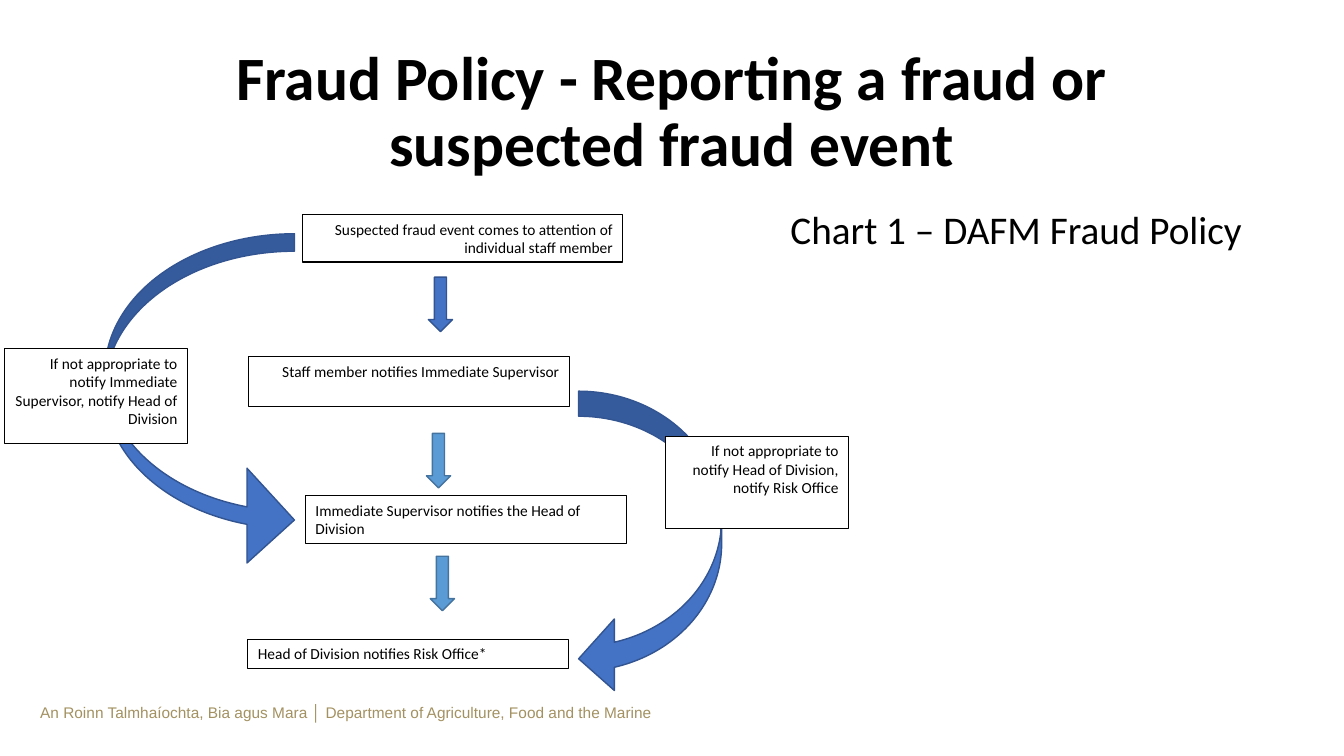
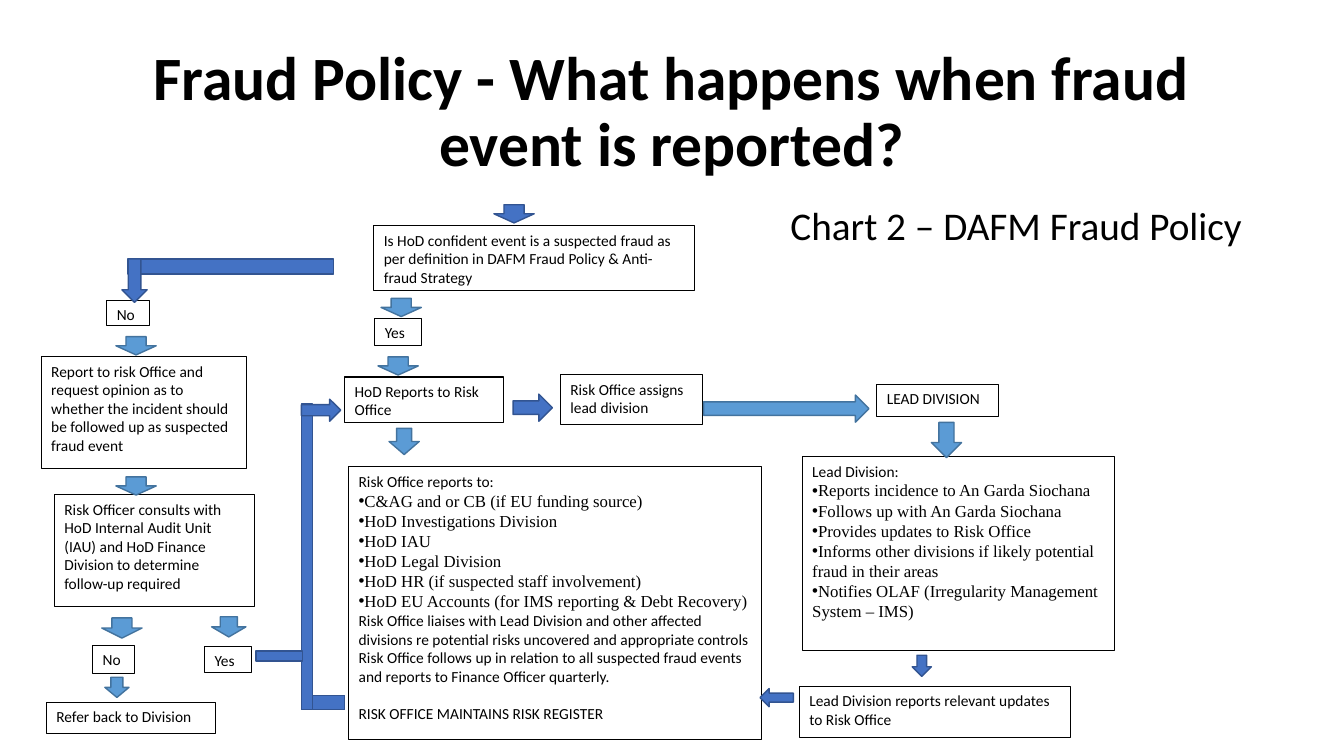
import pptx
import pptx.dml.color
import pptx.enum.shapes
import pptx.enum.text
import pptx.oxml.ns
import pptx.util
from lxml import etree

Pt = pptx.util.Pt
PRESET = pptx.enum.shapes.MSO_SHAPE
ALIGN = pptx.enum.text.PP_ALIGN
ANCHOR = pptx.enum.text.MSO_ANCHOR

COLOURS = {
    "white": "FFFFFF", "black": "000000", "gold": "A39161",
    "blue": "4472C4", "blue edge": "325491",
    "sky": "5B9BD5", "sky edge": "43739E",
}

# Text styles: font values, paragraph values, colour
NOTE_FONT = {"name": "Calibri", "size": Pt(11)}
STYLES = {
    "title": ({"name": "Calibri", "size": Pt(44), "bold": True},
              {"alignment": ALIGN.CENTER, "line_spacing": 0.9}, "black"),
    "subtitle": ({"name": "Calibri", "size": Pt(28)},
                 {"alignment": ALIGN.RIGHT, "line_spacing": 0.9}, "black"),
    "note": (NOTE_FONT, {"alignment": ALIGN.LEFT}, "black"),
    "note right": (NOTE_FONT, {"alignment": ALIGN.RIGHT}, "black"),
    "closing": (NOTE_FONT, {"alignment": ALIGN.LEFT, "space_before": Pt(13.4)}, "black"),
    "bullet": ({"name": "Times New Roman", "size": Pt(12)},
               {"alignment": ALIGN.LEFT}, "black"),
    "footer": ({"name": "Arial", "size": Pt(11)}, {"alignment": ALIGN.LEFT}, "gold"),
}


def write(holder, lines, anchor=ANCHOR.TOP):
    """Fill a box or text box with (style, text) lines."""
    frame = holder.text_frame
    frame.word_wrap = True
    frame.vertical_anchor = anchor
    for number, (style, text) in enumerate(lines):
        paragraph = frame.add_paragraph() if number else frame.paragraphs[0]
        run = paragraph.add_run()
        run.text = text
        font_values, paragraph_values, colour = STYLES[style]
        for target, values in ((run.font, font_values), (paragraph, paragraph_values)):
            for name, value in values.items():
                setattr(target, name, value)
        run.font.color.rgb = pptx.dml.color.RGBColor.from_string(COLOURS[colour])
        if style == "bullet":
            properties = paragraph._p.get_or_add_pPr()
            etree.SubElement(properties, pptx.oxml.ns.qn("a:buFont"), typeface="Arial")
            etree.SubElement(properties, pptx.oxml.ns.qn("a:buChar"), char="•")


def draw(slide, preset, place, fill, edge, width):
    """Add a flat preset shape at (left, top, width, height) in points."""
    shape = slide.shapes.add_shape(preset, *map(Pt, place))
    shape.shadow.inherit = False
    shape.fill.solid()
    shape.fill.fore_color.rgb = pptx.dml.color.RGBColor.from_string(COLOURS[fill])
    shape.line.color.rgb = pptx.dml.color.RGBColor.from_string(COLOURS[edge])
    shape.line.width = Pt(width)
    return shape


deck = pptx.Presentation()
deck.slide_width, deck.slide_height = Pt(960), Pt(540)

# Titles and chart captions
slides = []
for title, caption, caption_top in (
    ("Fraud Policy - Reporting a fraud or suspected fraud event",
     "Chart 1 – DAFM Fraud Policy", 146.9),
    ("Fraud Policy - What happens when fraud event is reported?",
     "Chart 2 – DAFM Fraud Policy", 144),
):
    slide = deck.slides.add_slide(deck.slide_layouts[6])
    heading = slide.shapes.add_textbox(Pt(66), Pt(28.8), Pt(828), Pt(104.4))
    write(heading, [("title", title)], ANCHOR.MIDDLE)
    subtitle = slide.shapes.add_textbox(Pt(534), Pt(caption_top), Pt(360), Pt(40))
    write(subtitle, [("subtitle", caption)])
    slides.append(slide)
reporting, response = slides

# Slide 1: bypass routes, behind the steps
for preset, place, thickness in (
    (PRESET.CURVED_RIGHT_ARROW, (74.9, 167, 135.4, 238.3), 0.092),
    (PRESET.CURVED_LEFT_ARROW, (413.3, 279.4, 102.2, 216.7), 0.175),
):
    bypass = draw(reporting, preset, place, "blue", "blue edge", 1)
    for index, value in enumerate((thickness, 0.5, 0.25)):
        bypass.adjustments[index] = value

# Slide 1: footer
footer = reporting.shapes.add_textbox(Pt(21.6), Pt(499), Pt(889.2), Pt(20.9))
write(footer, [("footer", "An Roinn Talmhaíochta, Bia agus Mara │ "
                          "Department of Agriculture, Food and the Marine")])

# Boxes on both slides
reporting_boxes = [
    ((216, 153.4, 229, 33.8), [("note right",
     "Suspected fraud event comes to attention of individual staff member")]),
    ((177.8, 254.9, 229, 35.3), [("note right", "Staff member notifies Immediate Supervisor")]),
    ((218.2, 354.2, 229, 33.8), [("note", "Immediate Supervisor notifies the Head of Division")]),
    ((177.1, 456.5, 229, 20.9), [("note", "Head of Division notifies Risk Office*")]),
    ((2.9, 249.1, 131, 67.7), [("note right",
     "If not appropriate to notify Immediate Supervisor, notify Head of Division")]),
    ((475.2, 311.8, 131, 65.5), [("note right",
     "If not appropriate to notify Head of Division, notify Risk Office")]),
]
response_boxes = [
    ((267.1, 161.3, 229, 46.1), [("note",
     "Is HoD confident event is a suspected fraud as per definition in "
     "DAFM Fraud Policy & Anti-fraud Strategy")]),
    ((76.3, 214.6, 30.2, 18), [("note", "No")]),
    ((146.2, 461.5, 33.8, 18.7), [("note", "Yes")]),
    ((29.5, 254.9, 146.9, 79.9), [("note",
     "Report to risk Office and request opinion as to whether the incident "
     "should be followed up as suspected fraud event")]),
    ((38.9, 353.5, 142.6, 79.9), [("note",
     "Risk Officer consults with HoD Internal Audit Unit (IAU) and HoD Finance "
     "Division to determine follow-up required")]),
    ((66.2, 460.8, 30.2, 20.2), [("note", "No")]),
    ((267.8, 227.5, 33.1, 19.4), [("note", "Yes")]),
    ((33.1, 501.8, 121, 22.3), [("note", "Refer back to Division")]),
    ((246.2, 269.3, 113.8, 32.4), [("note", "HoD Reports to Risk Office")]),
    ((249.1, 333.4, 295.2, 195.1), [
        ("note", "Risk Office reports to:"),
        ("bullet", "C&AG and or CB (if EU funding source)"),
        ("bullet", "HoD Investigations Division"),
        ("bullet", "HoD IAU"),
        ("bullet", "HoD Legal Division"),
        ("bullet", "HoD HR (if suspected staff involvement)"),
        ("bullet", "HoD EU Accounts (for IMS reporting & Debt Recovery)"),
        ("note", "Risk Office liaises with Lead Division and other affected divisions "
                 "re potential risks uncovered and appropriate controls"),
        ("note", "Risk Office follows up in relation to all suspected fraud events "
                 "and reports to Finance Officer quarterly."),
        ("closing", "RISK OFFICE MAINTAINS RISK REGISTER"),
    ]),
    ((400.3, 267.8, 101.5, 35.3), [("note", "Risk Office assigns lead division")]),
    ((626.4, 274.3, 87.1, 23), [("note", "LEAD DIVISION")]),
    ((573.1, 326.2, 223.2, 138.2), [
        ("note", "Lead Division:"),
        ("bullet", "Reports incidence to An Garda Siochana"),
        ("bullet", "Follows up with An Garda Siochana"),
        ("bullet", "Provides updates to Risk Office"),
        ("bullet", "Informs other divisions if likely potential fraud in their areas"),
        ("bullet", "Notifies OLAF (Irregularity Management System – IMS)"),
    ]),
    ((571, 490.3, 193.7, 36.7), [("note", "Lead Division reports relevant updates to Risk Office")]),
]
for slide, boxes in ((reporting, reporting_boxes), (response, response_boxes)):
    for place, lines in boxes:
        write(draw(slide, PRESET.RECTANGLE, place, "white", "black", 0.75), lines)

# Arrows and connecting bars on both slides
DOWN, RIGHT, BAR = PRESET.DOWN_ARROW, PRESET.RIGHT_ARROW, PRESET.FLOWCHART_PROCESS
reporting_arrows = [
    (DOWN, "blue", (306, 198, 17.3, 38.9)),
    (DOWN, "sky", (304.6, 309.6, 17.3, 38.9)),
    (DOWN, "sky", (307.4, 397.4, 17.3, 38.9)),
]
response_arrows = [
    # Into the question, then its Yes branch
    (DOWN, "blue", (352.8, 146.2, 28.8, 13)),
    (DOWN, "sky", (272.2, 213.1, 28.8, 13)),
    (DOWN, "sky", (270, 254.9, 28.8, 13)),
    (DOWN, "sky", (277.9, 306, 21.6, 18.7)),
    # No branch
    (BAR, "blue", (91.4, 185, 146.9, 10.8)),
    (DOWN, "blue", (87.1, 185, 18, 31)),
    (DOWN, "sky", (82.8, 240.5, 28.8, 13)),
    (DOWN, "sky", (82.8, 340.6, 28.8, 13)),
    (DOWN, "sky", (72.7, 441.4, 28.8, 14.4)),
    (DOWN, "sky", (151.2, 440.6, 24.5, 14.4)),
    (DOWN, "sky", (74.9, 483.8, 17.3, 14.4)),
    # Return to the Risk Office
    (BAR, "blue", (217.4, 496.8, 28.8, 10.1)),
    (BAR, "blue", (215.3, 288.7, 7.9, 218.2)),
    (RIGHT, "blue", (215.3, 285.1, 28.1, 15.8)),
    (PRESET.RECTANGLE, "blue", (182.9, 465.1, 33.1, 7.2)),
    # Lead division
    (RIGHT, "blue", (366.5, 281.5, 28.1, 19.4)),
    (RIGHT, "sky", (502.6, 282.2, 118.1, 19.4)),
    (DOWN, "sky", (665.3, 301.7, 21.6, 25.2)),
    (DOWN, "blue", (651.6, 468, 13.7, 15.1)),
    (PRESET.LEFT_ARROW, "blue", (542.9, 491.8, 23.8, 13)),
]
for slide, arrows in ((reporting, reporting_arrows), (response, response_arrows)):
    for preset, colour, place in arrows:
        draw(slide, preset, place, colour, colour + " edge", 1)

deck.save("out.pptx")
